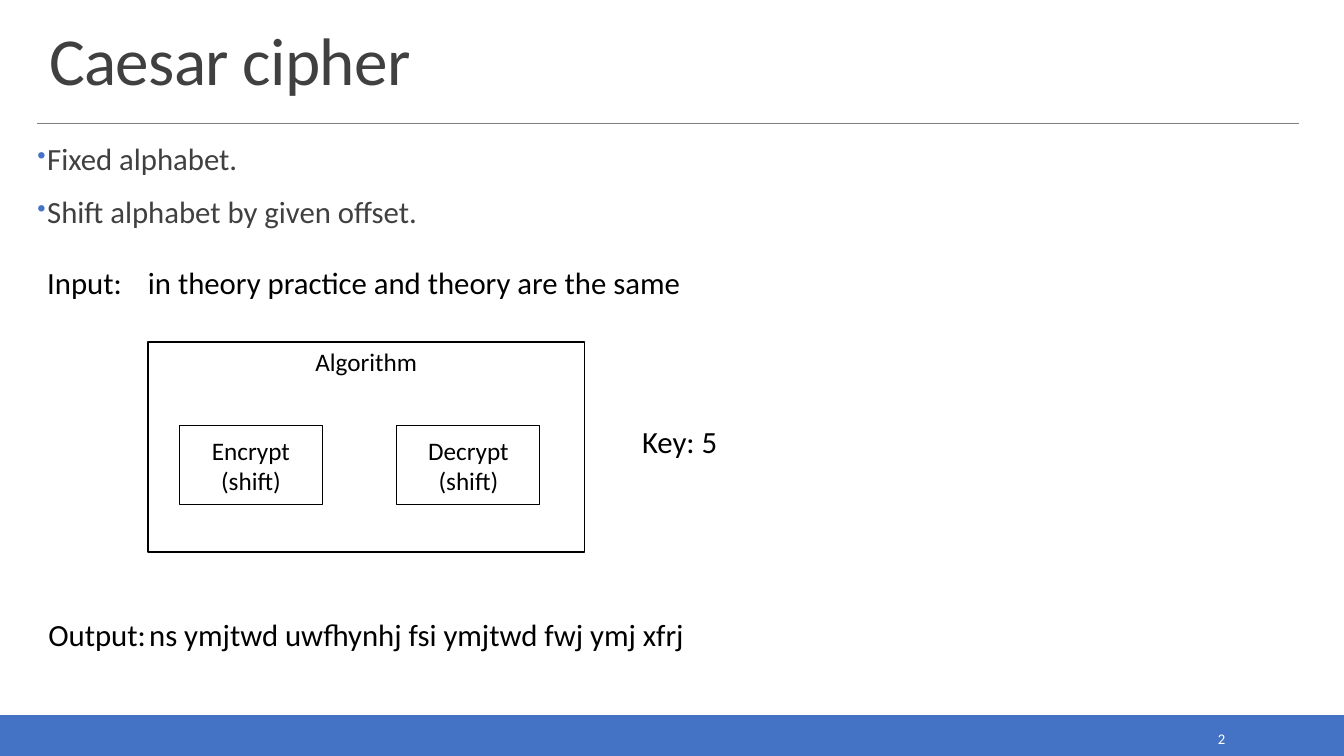
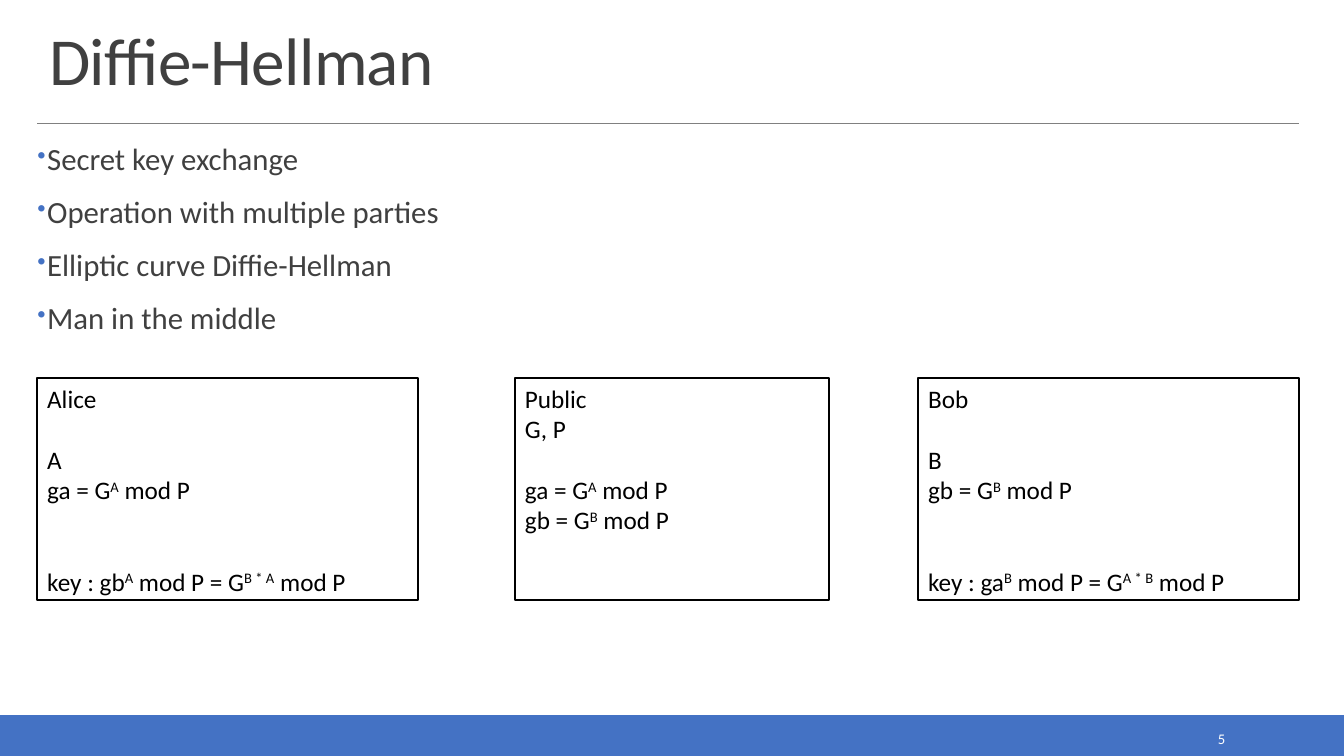
"""Build two slides on ciphers and key exchange."""
from lxml.etree import SubElement
from pptx import Presentation
from pptx.dml.color import RGBColor
from pptx.enum.shapes import MSO_CONNECTOR as Connector, MSO_SHAPE as Shape
from pptx.enum.text import MSO_ANCHOR as Anchor, MSO_AUTO_SIZE as AutoSize, PP_ALIGN as Align
from pptx.oxml import parse_xml
from pptx.oxml.ns import nsdecls, qn
from pptx.util import Cm, Pt

BLUE = RGBColor(0x44, 0x72, 0xC4)
GRAY = RGBColor(0x80, 0x80, 0x80)
DARK = RGBColor(0x40, 0x40, 0x40)
BLACK = RGBColor(0, 0, 0)
WHITE = RGBColor(0xFF, 0xFF, 0xFF)

FONT = "Calibri"
WIDTH, HEIGHT = 33.87, 19.05
LEFT, CONTENT_WIDTH = 0.94, 31.8
BLANK_LINE = Pt(22)
BULLET = (
    f'<a:buClr {nsdecls("a")}><a:srgbClr val="{BLUE}"/></a:buClr>',
    f'<a:buSzPct {nsdecls("a")} val="80000"/>',
    f'<a:buChar {nsdecls("a")} char="•"/>',
)


class SlideBuilder:
    """Hold the deck style and the current page."""

    def __init__(self):
        """Start an empty wide deck."""
        self.deck = Presentation()
        self.deck.slide_width, self.deck.slide_height = Cm(WIDTH), Cm(HEIGHT)
        self.page = None

    def style(self, para, size, color, align=Align.LEFT):
        """Set the font and alignment of a paragraph."""
        para.alignment = align
        para.font.name, para.font.size = FONT, Pt(size)
        para.font.color.rgb = color

    def fill_text(self, frame, lines, size, color=BLACK, align=Align.LEFT):
        """Fill a frame; text between carets is raised, None leaves a gap above the next line."""
        gap, used = 0, False
        for line in lines:
            if line is None:
                gap += BLANK_LINE
                continue
            para = frame.add_paragraph() if used else frame.paragraphs[0]
            used = True
            for index, piece in enumerate(line.split("^")):
                span = para.add_run()
                span.text = piece
                if index % 2:
                    span.font._element.set("baseline", "30000")
            self.style(para, size, color, align)
            if gap:
                para.space_before = gap
            gap = 0

    def start(self, title, number):
        """Add a page with its band, rule, title and number."""
        self.page = self.deck.slides.add_slide(self.deck.slide_layouts[5])
        self.box(0, 18.04, WIDTH, 1.01, fill=BLUE, line=BLUE)
        self.rule(3.12)
        heading = self.page.shapes.title
        heading.left, heading.top, heading.width, heading.height = map(
            Cm, (0.99, 0.5, CONTENT_WIDTH, 2.13))
        frame = heading.text_frame
        frame.auto_size, frame.vertical_anchor = AutoSize.NONE, Anchor.BOTTOM
        self.fill_text(frame, [title], 48, DARK)
        para = frame.paragraphs[0]
        para.line_spacing = 0.85
        para.font._element.set("spc", "-50")
        self.text(27.5, 18.26, 3.63, 0.71, [number], 10.5, WHITE, Align.RIGHT, Anchor.MIDDLE)

    def rule(self, top):
        """Draw a thin line across the content."""
        line = self.page.shapes.add_connector(
            Connector.STRAIGHT, Cm(LEFT), Cm(top), Cm(LEFT + CONTENT_WIDTH), Cm(top))
        line.line.color.rgb, line.line.width = GRAY, Pt(0.5)
        SubElement(line._element.spPr, qn("a:effectLst"))

    def text(self, left, top, width, height, lines, size=22, color=BLACK,
             align=Align.LEFT, anchor=Anchor.TOP):
        """Add a wrapped text box and return its frame."""
        box = self.page.shapes.add_textbox(Cm(left), Cm(top), Cm(width), Cm(height))
        frame = box.text_frame
        frame.word_wrap, frame.vertical_anchor = True, anchor
        self.fill_text(frame, lines, size, color, align)
        return frame

    def bullets(self, height, lines):
        """Add the bulleted list below the title."""
        frame = self.text(LEFT, 3.53, CONTENT_WIDTH, height, lines, color=DARK)
        frame.margin_left = frame.margin_right = 0
        frame.margin_top = frame.margin_bottom = Cm(0.1)
        for para in frame.paragraphs:
            para.line_spacing = 0.9
            para.space_before, para.space_after = Pt(12), Pt(2)
            properties = para._p.get_or_add_pPr()
            properties.set("marL", str(Cm(0.25)))
            properties.set("indent", str(-Cm(0.25)))
            for xml in BULLET:
                para.font._element.addprevious(parse_xml(xml))

    def box(self, left, top, width, height, lines=(), fill=None, line=BLACK,
            weight=1.25, align=Align.LEFT, anchor=Anchor.TOP):
        """Add an outlined rectangle with optional text."""
        box = self.page.shapes.add_shape(
            Shape.RECTANGLE, Cm(left), Cm(top), Cm(width), Cm(height))
        box.shadow.inherit = False
        if fill is None:
            box.fill.background()
        else:
            box.fill.solid()
            box.fill.fore_color.rgb = fill
        box.line.color.rgb, box.line.width = line, Pt(weight)
        box.text_frame.vertical_anchor = anchor
        self.fill_text(box.text_frame, lines, 18, align=align)
        return box


def caesar(builder):
    """Build the Caesar cipher page."""
    builder.start("Caesar cipher", "2")
    builder.bullets(2.51, ["Fixed alphabet.", "Shift alphabet by given offset."])
    builder.text(0.94, 6.53, 17.17, 1.19, ["Input:\tin theory practice and theory are the same"])
    builder.text(0.97, 15.39, 17.17, 1.19, ["Output:\tns ymjtwd uwfhynhj fsi ymjtwd fwj ymj xfrj"])
    builder.text(15.93, 10.54, 2.51, 1.19, ["Key: 5"])
    parts = [builder.box(3.73, 8.61, 11, 5.31, ["Algorithm"], align=Align.CENTER)]
    for left, step in ((4.52, "Encrypt"), (10, "Decrypt")):
        parts.append(builder.box(left, 10.72, 3.61, 2, [step, "(shift)"], weight=0.75,
                                 align=Align.CENTER, anchor=Anchor.MIDDLE))
    builder.page.shapes.add_group_shape(parts)


def party(name, own, other):
    """Return the lines for one side of the exchange."""
    mine, theirs = own.lower(), other.lower()
    return [name, None, own, f"g{mine} = G^{own}^ mod P", None, None,
            f"key : g{theirs}^{own}^ mod P = G^{other} * {own}^ mod P"]


def diffie_hellman(builder):
    """Build the key exchange page."""
    builder.start("Diffie-Hellman", "5")
    builder.bullets(5.59, ["Secret key exchange", "Operation with multiple parties",
                           "Elliptic curve Diffie-Hellman", "Man in the middle"])
    public = ["Public", "G, P", None, "ga = G^A^ mod P", "gb = G^B^ mod P"]
    for left, width, lines in ((LEFT, 9.6, party("Alice", "A", "B")),
                               (12.98, 7.92, public),
                               (23.14, 9.6, party("Bob", "B", "A"))):
        builder.box(left, 9.53, width, 5.59, lines, fill=WHITE)


def main():
    """Build and save the deck."""
    builder = SlideBuilder()
    caesar(builder)
    diffie_hellman(builder)
    builder.deck.save("out.pptx")


if __name__ == "__main__":
    main()
